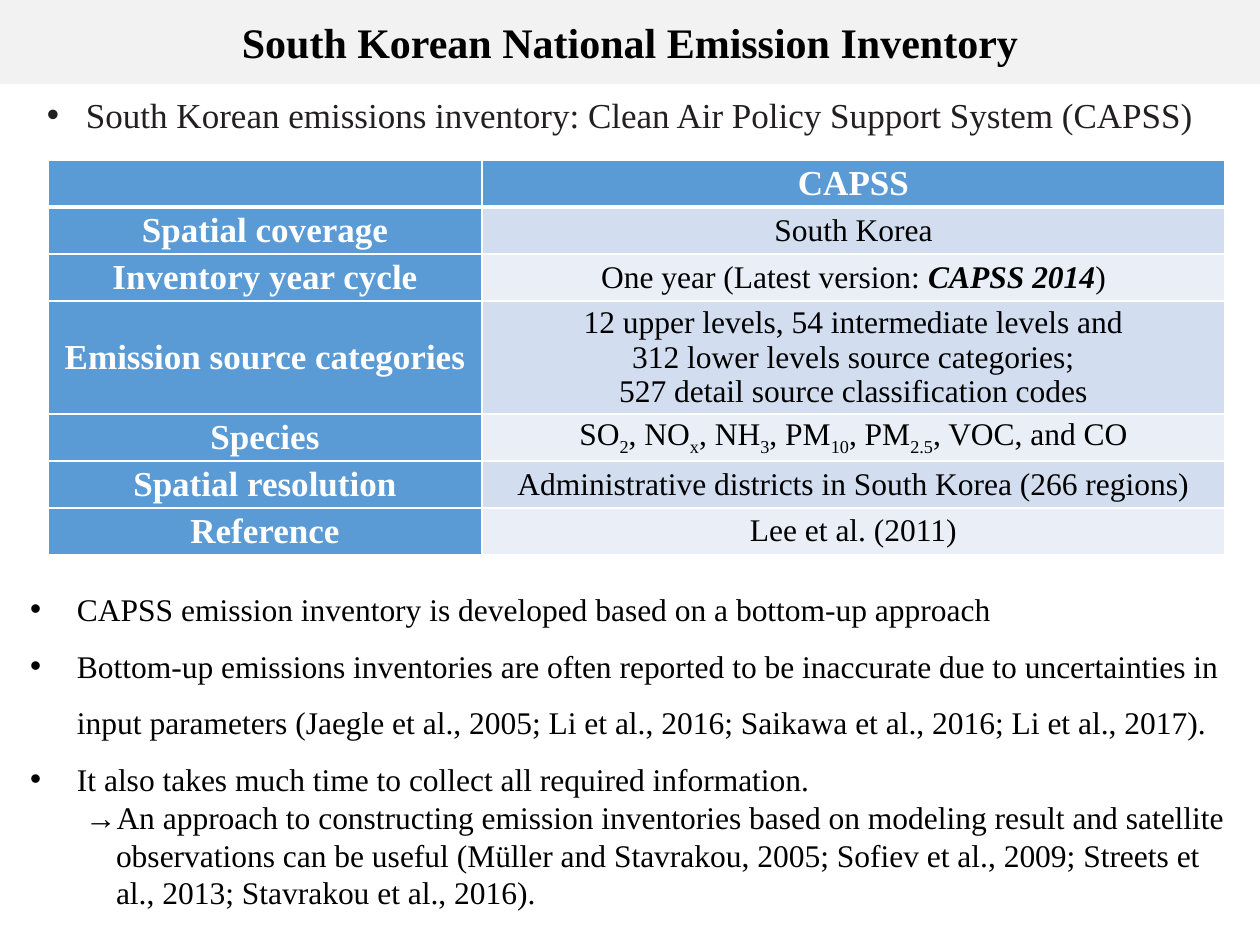
from dataclasses import dataclass

from lxml import etree
from pptx import Presentation
from pptx import util as u
from pptx.dml.color import RGBColor
from pptx.enum import text
from pptx.oxml import ns

FONT = "Times New Roman"
BLACK = RGBColor(0x00, 0x00, 0x00)
WHITE = RGBColor(0xFF, 0xFF, 0xFF)
INK = RGBColor(0x23, 0x1F, 0x20)
BANNER = RGBColor(0xF2, 0xF2, 0xF2)
BLUE = RGBColor(0x5B, 0x9B, 0xD5)
BANDS = (RGBColor(0xD2, 0xDE, 0xEF), RGBColor(0xEA, 0xEF, 0xF7))
CENTER = text.PP_ALIGN.CENTER
LEFT = text.PP_ALIGN.LEFT

TITLE = {"name": FONT, "size": u.Pt(24), "bold": True, "color": BLACK}
LEAD = {"name": FONT, "size": u.Pt(20), "bold": False, "color": INK}
BODY = {"name": FONT, "size": u.Pt(18), "bold": False, "color": BLACK}
LABEL = {"name": FONT, "size": u.Pt(20), "bold": True, "color": WHITE}
STRONG = {**BODY, "bold": True, "italic": True}


@dataclass(frozen=True)
class Span:
    words: str
    style: dict
    baseline: int = 0


@dataclass(frozen=True)
class Line:
    spans: tuple[Span, ...]
    align: text.PP_ALIGN = LEFT
    spacing: float = 1.0
    margin: int = 0
    hanging: int = 0
    bullet: str = ""


@dataclass(frozen=True)
class Entry:
    label: str
    lines: tuple[Line, ...]
    height: int = 47


def px(length: int) -> u.Emu:
    return u.Emu(round(length * 914400 / 126))


def plain(words: str, style: dict = BODY, **layout) -> Line:
    return Line((Span(words, style),), **layout)


def centered(*words: str) -> tuple[Line, ...]:
    return tuple(plain(item, align=CENTER) for item in words)


def subscripted(*pieces: str) -> Line:
    spans = (Span(piece, BODY, -25000 * (i % 2)) for i, piece in enumerate(pieces))
    return Line(tuple(spans), CENTER)


def add_span(para, item: Span) -> None:
    span = para.add_run()
    span.text = item.words
    for name, value in item.style.items():
        if name == "color":
            span.font.color.rgb = value
        else:
            setattr(span.font, name, value)
    if item.baseline:
        span._r.get_or_add_rPr().set("baseline", str(item.baseline))


def write(frame, lines: tuple[Line, ...]) -> None:
    for index, line in enumerate(lines):
        para = frame.paragraphs[0] if index == 0 else frame.add_paragraph()
        settings = {
            "alignment": line.align,
            "line_spacing": line.spacing,
            "space_before": u.Pt(0),
            "space_after": u.Pt(0),
        }
        for name, value in settings.items():
            setattr(para, name, value)
        props = para._p.get_or_add_pPr()
        props.set("marL", str(px(line.margin)))
        props.set("indent", str(-px(line.hanging)))
        if line.bullet:
            font = etree.SubElement(props, ns.qn("a:buFont"))
            font.set("typeface", "Arial")
            etree.SubElement(props, ns.qn("a:buChar")).set("char", line.bullet)
        else:
            etree.SubElement(props, ns.qn("a:buNone"))
        for item in line.spans:
            add_span(para, item)


def fill_box(box, place: tuple[int, ...], insets: tuple[int, ...],
             anchor: text.MSO_ANCHOR, lines: tuple[Line, ...]) -> None:
    for name, value in zip(("left", "top", "width", "height"), place):
        setattr(box, name, px(value))
    frame = box.text_frame
    for side, value in zip(("left", "top", "right", "bottom"), insets):
        setattr(frame, f"margin_{side}", px(value))
    frame.word_wrap = True
    frame.auto_size = text.MSO_AUTO_SIZE.NONE
    frame.vertical_anchor = anchor
    write(frame, lines)


def style_cell(cell, color: RGBColor, top: int, bottom: int) -> None:
    props = cell._tc.get_or_add_tcPr()
    for side, points in {"L": 1, "R": 1, "T": top, "B": bottom}.items():
        border = etree.SubElement(props, ns.qn(f"a:ln{side}"), w=str(u.Pt(points)))
        paint = etree.SubElement(border, ns.qn("a:solidFill"))
        etree.SubElement(paint, ns.qn("a:srgbClr"), val=str(WHITE))
    cell.fill.solid()
    cell.fill.fore_color.rgb = color
    margins = {"margin_left": 9, "margin_right": 9, "margin_top": 0, "margin_bottom": 0}
    for name, value in margins.items():
        setattr(cell, name, px(value))
    cell.vertical_anchor = text.MSO_ANCHOR.MIDDLE


def add_inventory(page, entries: tuple[Entry, ...]) -> None:
    widths = (434, 743)
    height = sum(entry.height for entry in entries)
    table = page.shapes.add_table(
        len(entries), len(widths), px(48), px(160), px(sum(widths)), px(height)
    ).table
    for column, width in zip(table.columns, widths):
        column.width = px(width)
    for index, entry in enumerate(entries):
        table.rows[index].height = px(entry.height)
        value_color = BLUE if index == 0 else BANDS[(index - 1) % 2]
        label = (plain(entry.label, LABEL, align=CENTER),) if entry.label else ()
        contents = ((label, BLUE), (entry.lines, value_color))
        for column, (lines, color) in enumerate(contents):
            cell = table.cell(index, column)
            style_cell(cell, color, 3 if index == 1 else 1, 3 if index == 0 else 1)
            write(cell.text_frame, lines)


ENTRIES = (
    Entry("", (plain("CAPSS", LABEL, align=CENTER),)),
    Entry("Spatial coverage", centered("South Korea")),
    Entry("Inventory year cycle", (Line((
        Span("One year (Latest version: ", BODY),
        Span("CAPSS 2014", STRONG),
        Span(")", BODY),
    ), CENTER),)),
    Entry("Emission source categories", centered(
        "12 upper levels, 54 intermediate levels and",
        "312 lower levels source categories;",
        "527 detail source classification codes",
    ), 113),
    Entry("Species", (subscripted(
        "SO", "2", ", NO", "x", ", NH", "3", ", PM", "10", ", PM", "2.5", ", VOC, and CO",
    ),)),
    Entry("Spatial resolution",
          centered("Administrative districts in South Korea (266 regions)")),
    Entry("Reference", centered("Lee et al. (2011)")),
)
FINDINGS = (
    "CAPSS emission inventory is developed based on a bottom-up approach",
    "Bottom-up emissions inventories are often reported to be inaccurate due to "
    "uncertainties in input parameters (Jaegle et al., 2005; Li et al., 2016; "
    "Saikawa et al., 2016; Li et al., 2017).",
    "It also takes much time to collect all required information.",
)
CONCLUSION = (
    "→An approach to constructing emission inventories based on modeling result and "
    "satellite observations can be useful (Müller and Stavrakou, 2005; Sofiev et al., "
    "2009; Streets et al., 2013; Stavrakou et al., 2016)."
)


def main() -> None:
    deck = Presentation()
    deck.slide_width, deck.slide_height = px(1260), px(945)
    page = deck.slides.add_slide(deck.slide_layouts[3])
    title, lead, body = page.placeholders
    title.fill.solid()
    title.fill.fore_color.rgb = BANNER
    fill_box(title, (0, 0, 1260, 84), (13, 6, 13, 6), text.MSO_ANCHOR.MIDDLE,
             (plain("South Korean National Emission Inventory", TITLE, align=CENTER),))
    fill_box(lead, (34, 87, 1191, 55), (13, 6, 13, 6), text.MSO_ANCHOR.TOP, (plain(
        "South Korean emissions inventory: Clean Air Policy Support System (CAPSS)",
        LEAD, margin=39, hanging=39, bullet="•"),))
    findings = tuple(plain(item, spacing=1.5, margin=47, hanging=47, bullet="•")
                     for item in FINDINGS)
    fill_box(body, (30, 571, 1205, 344), (0, 0, 6, 0), text.MSO_ANCHOR.TOP,
             findings + (plain(CONCLUSION, margin=86, hanging=31),))
    add_inventory(page, ENTRIES)
    deck.save("out.pptx")


if __name__ == "__main__":
    main()
